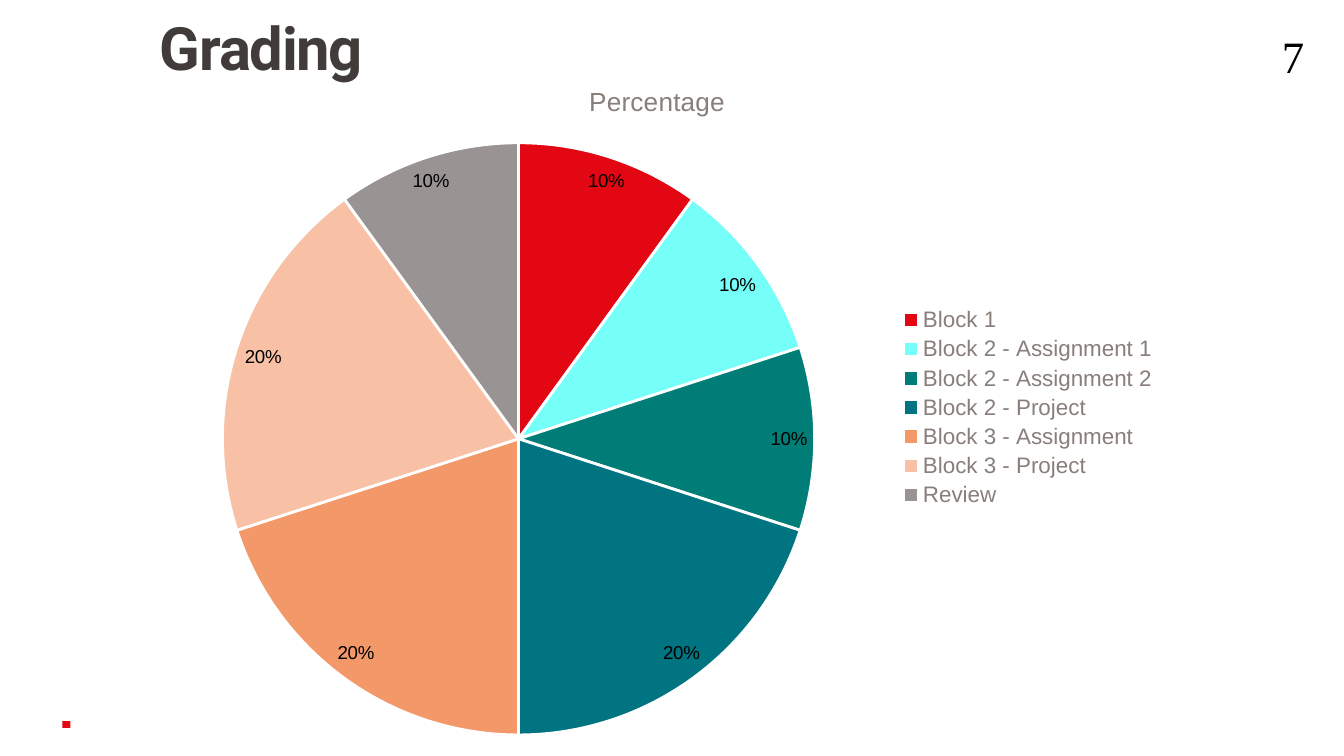
import pptx
import pptx.chart.data
import pptx.dml.color
import pptx.enum.chart
import pptx.enum.shapes
import pptx.enum.text
import pptx.oxml
import pptx.oxml.ns
import pptx.util

RGBColor = pptx.dml.color.RGBColor
Inches = pptx.util.Inches
Pt = pptx.util.Pt

WIDTH = Inches(10)
HEIGHT = WIDTH * 9 // 16
RED = RGBColor(0xE3, 0x06, 0x13)
AQUA = RGBColor(0x76, 0xFF, 0xF8)
GREEN = RGBColor(0x00, 0x7D, 0x77)
TEAL = RGBColor(0x00, 0x74, 0x80)
ORANGE = RGBColor(0xF3, 0x98, 0x69)
PEACH = RGBColor(0xF8, 0xC1, 0xA5)
GREY = RGBColor(0x99, 0x93, 0x93)
TITLE_BROWN = RGBColor(0x41, 0x3C, 0x3A)
CHART_BROWN = RGBColor(0x88, 0x7E, 0x7A)
BLACK = RGBColor(0, 0, 0)
WHITE = RGBColor(0xFF, 0xFF, 0xFF)

GRADE_PARTS = [
    ("Block 1 ", 10, RED),
    ("Block 2 - Assignment 1", 10, AQUA),
    ("Block 2 - Assignment 2", 10, GREEN),
    ("Block 2 - Project", 20, TEAL),
    ("Block 3 - Assignment", 20, ORANGE),
    ("Block 3 - Project", 20, PEACH),
    ("Review", 10, GREY),
]


def area(left, top, width, height):
    """Turn percentages of the slide into left, top, width, height."""
    return (int(WIDTH * left / 100), int(HEIGHT * top / 100),
            int(WIDTH * width / 100), int(HEIGHT * height / 100))


def style_font(font, name, size, color):
    font.name = name
    font.size = Pt(size)
    font.color.rgb = color


def add_text(page, box, text, name, size, color, margins):
    """Add one line of text; margins are left, top, right, bottom in inches."""
    frame = page.shapes.add_textbox(*box).text_frame
    frame.word_wrap = True
    frame.vertical_anchor = pptx.enum.text.MSO_ANCHOR.TOP
    (frame.margin_left, frame.margin_top,
     frame.margin_right, frame.margin_bottom) = map(Inches, margins)
    paragraph = frame.paragraphs[0]
    paragraph.text = text
    style_font(paragraph.font, name, size, color)
    return paragraph


def add_title(page, box):
    paragraph = add_text(page, box, "Grading", "Roboto", 32, TITLE_BROWN,
                         (0.2, 0, 0.08, 0.05))
    paragraph.font.bold = True
    paragraph.line_spacing = 0.9
    paragraph.runs[0].font._element.set("spc", "-70")


def add_page_number(page, box):
    add_text(page, box, "7", "Times New Roman", 24, BLACK, (0.1, 0, 0.1, 0))


def add_corner_mark(page, box):
    mark = page.shapes.add_shape(pptx.enum.shapes.MSO_SHAPE.RECTANGLE, *box)
    mark.shadow.inherit = False
    mark.fill.solid()
    mark.fill.fore_color.rgb = RED
    mark.line.fill.background()


def place_plot(chart, **shares):
    """Fix the pie's inner area as shares (x, y, w, h) of the chart."""
    plot_area = chart._chartSpace.chart.plotArea
    for old in plot_area.findall(pptx.oxml.ns.qn("c:layout")):
        plot_area.remove(old)
    settings = {"layoutTarget": "inner", "xMode": "edge", "yMode": "edge", **shares}
    entries = "".join(f'<c:{key} val="{value}"/>' for key, value in settings.items())
    plot_area.insert(0, pptx.oxml.parse_xml(
        f'<c:layout {pptx.oxml.ns.nsdecls("c")}>'
        f'<c:manualLayout>{entries}</c:manualLayout></c:layout>'))


def add_grading_chart(page, box):
    data = pptx.chart.data.CategoryChartData()
    data.categories = [name for name, _, _ in GRADE_PARTS]
    data.add_series("Percentage", [value for _, value, _ in GRADE_PARTS])
    chart = page.shapes.add_chart(
        pptx.enum.chart.XL_CHART_TYPE.PIE, *box, data).chart
    style_font(chart.font, "Arial", 10, BLACK)

    chart.has_title = True
    heading = chart.chart_title.text_frame.paragraphs[0]
    heading.text = "Percentage"
    style_font(heading.font, "Arial", 14, CHART_BROWN)
    heading.font.bold = False
    chart.chart_title.include_in_layout = False

    chart.has_legend = True
    chart.legend.position = pptx.enum.chart.XL_LEGEND_POSITION.RIGHT
    chart.legend.include_in_layout = False
    style_font(chart.legend.font, "Arial", 12, CHART_BROWN)

    plot = chart.plots[0]
    plot.vary_by_categories = True
    plot.has_data_labels = True
    labels = plot.data_labels
    labels.show_percentage = True
    labels.show_value = False
    labels.number_format = "0%"
    labels.number_format_is_linked = False
    labels.position = pptx.enum.chart.XL_LABEL_POSITION.BEST_FIT
    style_font(labels.font, "Arial", 10, BLACK)

    for index, (_, _, color) in enumerate(GRADE_PARTS):
        slice_format = plot.series[0].points[index].format
        slice_format.fill.solid()
        slice_format.fill.fore_color.rgb = color
        slice_format.line.color.rgb = WHITE
        slice_format.line.width = Pt(1.5)
    place_plot(chart, x=0.07, y=0.12, w=0.59, h=0.85)


def main():
    deck = pptx.Presentation()
    deck.slide_width, deck.slide_height = WIDTH, HEIGHT
    page = deck.slides.add_slide(deck.slide_layouts[6])
    add_corner_mark(page, area(4.65, 95.4, 0.6, 0.9))
    add_title(page, area(9.9, 2.5, 40.1, 20.8))
    add_grading_chart(page, area(10.7, 7.83, 76.4, 92.17))
    add_page_number(page, area(94.4, 3.74, 5.6, 3.2))
    deck.save("out.pptx")


if __name__ == "__main__":
    main()
